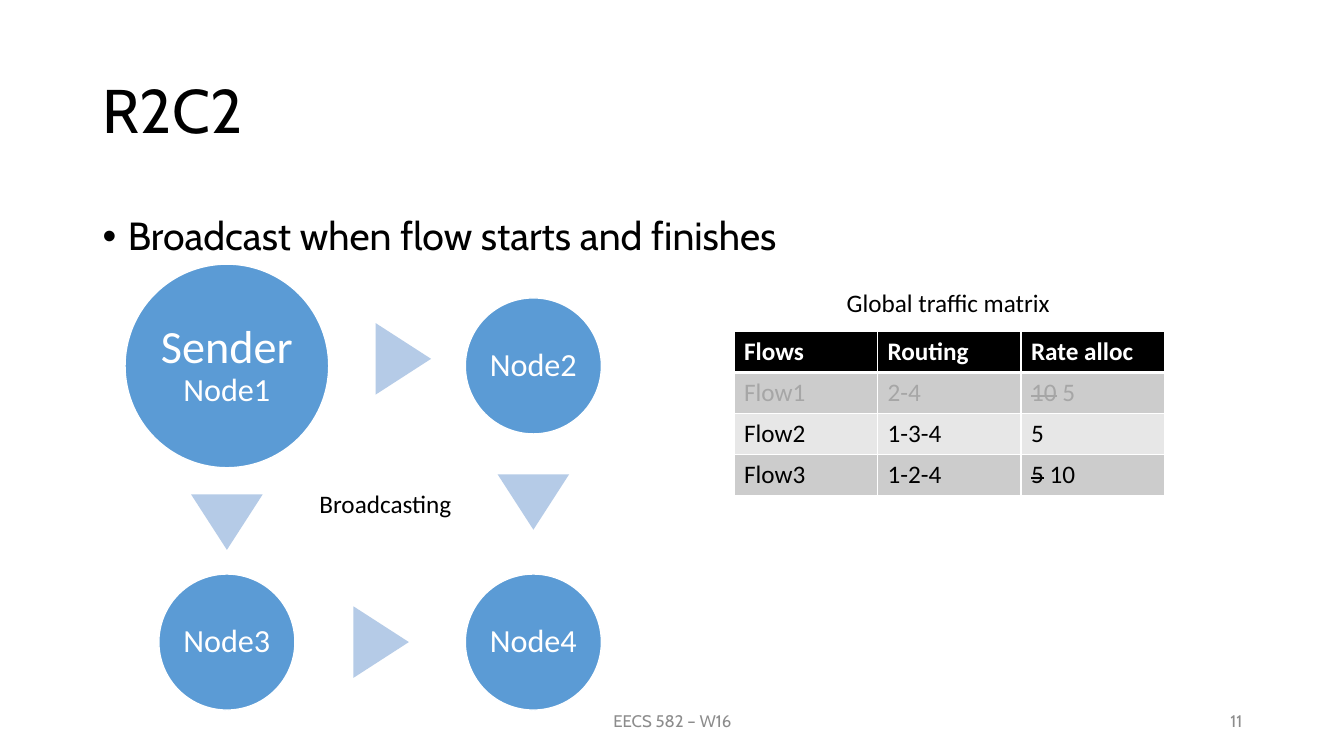
from pptx import Presentation
from pptx.dml.color import RGBColor
from pptx.enum.shapes import MSO_SHAPE as Shape
from pptx.enum.text import MSO_ANCHOR as Anchor, MSO_AUTO_SIZE as AutoSize, PP_ALIGN as Align
from pptx.oxml.ns import qn
from pptx.util import Pt
from lxml.etree import SubElement

PX = 9144
BLACK = RGBColor(0x00, 0x00, 0x00)
WHITE = RGBColor(0xFF, 0xFF, 0xFF)
NODE_BLUE = RGBColor(0x5B, 0x9B, 0xD5)
ARROW_BLUE = RGBColor(0xB5, 0xCB, 0xE7)
FOOTER_GRAY = RGBColor(0x8C, 0x8C, 0x8C)
ENDED_GRAY = RGBColor(0xA6, 0xA6, 0xA6)
DARK_BAND = RGBColor(0xCC, 0xCC, 0xCC)
LIGHT_BAND = RGBColor(0xE7, 0xE7, 0xE7)

LEFT_COLUMN, RIGHT_COLUMN = 225, 529
TOP_ROW, BOTTOM_ROW = 363, 637
SENDER_SIZE, NODE_SIZE = 202, 135
ARROW_WIDTH, ARROW_HEIGHT = 71, 55
RIGHT, DOWN = 90, 180

FLOWS = [
    (["Flows", "Routing", "Rate alloc"], WHITE, BLACK),
    (["Flow1", "2-4", ("10", " 5")], ENDED_GRAY, DARK_BAND),
    (["Flow2", "1-3-4", "5"], BLACK, LIGHT_BAND),
    (["Flow3", "1-2-4", ("5", " 10")], BLACK, DARK_BAND),
]


def box(left, top, width, height):
    return [length * PX for length in (left, top, width, height)]


def centred_box(x, y, width, height):
    return [round(length * PX) for length in (x - width / 2, y - height / 2, width, height)]


def add_run(paragraph, text, size=18, font="Calibri", color=BLACK, bold=False, strike=False):
    run = paragraph.add_run()
    run.text = text
    run.font.size = Pt(size)
    run.font.name = font
    run.font.color.rgb = color
    run.font.bold = bold
    if strike:
        run.font._element.set("strike", "sngStrike")


def write(frame, text, align=Align.LEFT, anchor=Anchor.MIDDLE, wrap=True, spacing=1.0, **style):
    frame.word_wrap = wrap
    frame.auto_size = AutoSize.NONE
    frame.vertical_anchor = anchor
    paragraph = frame.paragraphs[0]
    paragraph.alignment = align
    paragraph.line_spacing = spacing
    add_run(paragraph, text, **style)
    return paragraph


def add_label(slide, place, text, **style):
    return write(slide.shapes.add_textbox(*box(*place)).text_frame, text, **style)


def add_bullet(paragraph, indent):
    properties = paragraph._p.get_or_add_pPr()
    properties.set("marL", str(indent * PX))
    properties.set("indent", str(-indent * PX))
    SubElement(properties, qn("a:buFont"), typeface="Arial")
    SubElement(properties, qn("a:buChar"), char="•")


def add_filled(slide, kind, place, color):
    shape = slide.shapes.add_shape(kind, *place)
    shape.shadow.inherit = False
    shape.fill.solid()
    shape.fill.fore_color.rgb = color
    shape.line.fill.background()
    return shape


def add_node(slide, x, y, diameter, text, size=23):
    shape = add_filled(slide, Shape.OVAL, centred_box(x, y, diameter, diameter), NODE_BLUE)
    shape.line.color.rgb = WHITE
    shape.line.width = Pt(1)
    frame = shape.text_frame
    frame.margin_left = frame.margin_right = frame.margin_top = frame.margin_bottom = 3 * PX
    return write(frame, text, align=Align.CENTER, wrap=False, spacing=0.9, size=size, color=WHITE)


def add_arrow(slide, x, y, direction):
    place = centred_box(x, y, ARROW_WIDTH, ARROW_HEIGHT)
    add_filled(slide, Shape.ISOSCELES_TRIANGLE, place, ARROW_BLUE).rotation = direction


def add_borders(cell, bottom, top):
    properties = cell._tc.get_or_add_tcPr()
    for side, points in (("L", 1), ("R", 1), ("T", top), ("B", bottom)):
        line = SubElement(properties, qn(f"a:ln{side}"), w=str(Pt(points)))
        fill = SubElement(line, qn("a:solidFill"))
        SubElement(fill, qn("a:srgbClr"), val=str(WHITE))


def fill_cell(cell, value, color, background, header, below_header):
    add_borders(cell, bottom=3 if header else 1, top=3 if below_header else 1)
    cell.fill.solid()
    cell.fill.fore_color.rgb = background
    paragraph = cell.text_frame.paragraphs[0]
    if isinstance(value, tuple):
        previous, value = value
        add_run(paragraph, previous, color=color, strike=True)
    add_run(paragraph, value, color=color, bold=header)


def add_flow_table(slide, place):
    table = slide.shapes.add_table(len(FLOWS), 3, *box(*place)).table
    table.horz_banding = False
    for row, (values, color, background) in enumerate(FLOWS):
        for column, value in enumerate(values):
            fill_cell(table.cell(row, column), value, color, background, row == 0, row == 1)


def add_title(slide, place, text):
    title = slide.shapes.title
    title.left, title.top, title.width, title.height = box(*place)
    write(title.text_frame, text, spacing=0.9, size=44, font="Cabin")


def add_broadcast(slide):
    sender = add_node(slide, LEFT_COLUMN, TOP_ROW, SENDER_SIZE, "Sender", size=33)
    sender.add_line_break()
    add_run(sender, "Node1", size=23, color=WHITE)
    add_node(slide, RIGHT_COLUMN, TOP_ROW, NODE_SIZE, "Node2")
    add_node(slide, LEFT_COLUMN, BOTTOM_ROW, NODE_SIZE, "Node3")
    add_node(slide, RIGHT_COLUMN, BOTTOM_ROW, NODE_SIZE, "Node4")
    add_arrow(slide, 400, 356, RIGHT)
    add_arrow(slide, LEFT_COLUMN, 518, DOWN)
    add_arrow(slide, RIGHT_COLUMN, 498, DOWN)
    add_arrow(slide, 378, BOTTOM_ROW, RIGHT)
    add_label(slide, (307, 479, 153, 40), "Broadcasting", wrap=False)


def main():
    presentation = Presentation()
    presentation.slide_width, presentation.slide_height = 1333 * PX, 750 * PX
    slide = presentation.slides.add_slide(presentation.slide_layouts[5])
    add_title(slide, (92, 40, 1150, 145), "R2C2")
    statement = add_label(slide, (92, 211, 1150, 50), "Broadcast when flow starts and finishes",
                          spacing=0.9, size=28, font="Cabin")
    add_bullet(statement, 25)
    add_broadcast(slide)
    add_label(slide, (830, 280, 224, 40), "Global traffic matrix", wrap=False)
    add_flow_table(slide, (728, 329, 427, 160))
    footer = {"size": 12, "font": "Cabin", "color": FOOTER_GRAY}
    add_label(slide, (442, 695, 450, 40), "EECS 582 – W16", align=Align.CENTER, **footer)
    add_label(slide, (942, 695, 300, 40), "11", align=Align.RIGHT, **footer)
    presentation.save("out.pptx")


if __name__ == "__main__":
    main()
